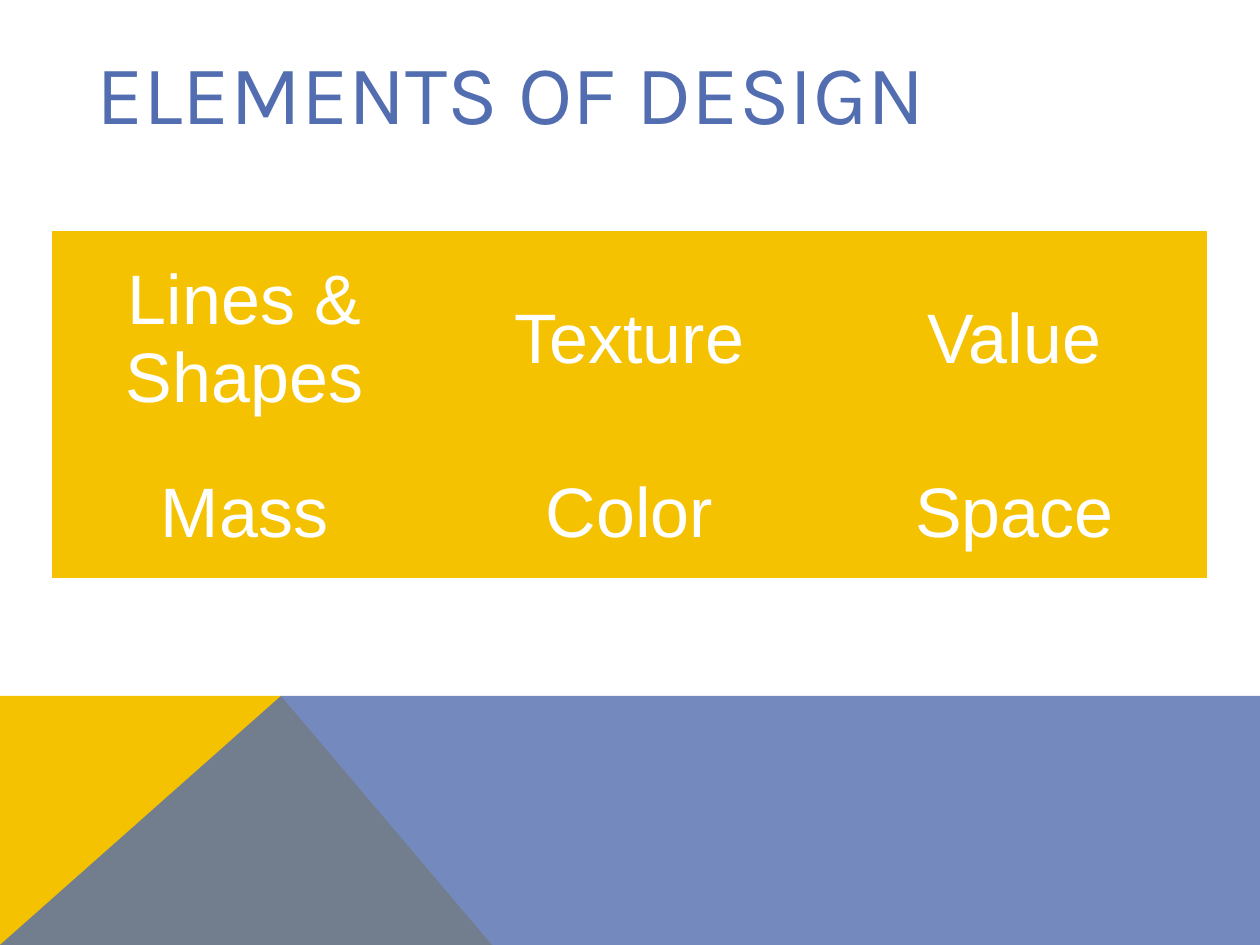
from pptx import Presentation
from pptx.dml.color import RGBColor
from pptx.enum.text import MSO_ANCHOR, PP_ALIGN
from pptx.oxml.ns import qn
from pptx.util import Pt

PX = 914400 // 126
WIDE, HIGH = 1260, 945
GOLD = RGBColor(0xF5, 0xC2, 0x01)
BLUE = RGBColor(0x52, 0x6D, 0xB0)
WHITE = RGBColor(0xFF, 0xFF, 0xFF)
LEFT, CENTER = PP_ALIGN.LEFT, PP_ALIGN.CENTER
MIDDLE = MSO_ANCHOR.MIDDLE

deck = Presentation()
deck.slide_width, deck.slide_height = WIDE * PX, HIGH * PX
slide = deck.slides.add_slide(deck.slide_layouts[6])


def write(frame, text, size, font, color, align=LEFT):
    frame.word_wrap = True
    para = frame.paragraphs[0]
    para.alignment = align
    run = para.add_run()
    run.text = text
    run.font.size = Pt(size)
    run.font.name = font
    run.font.color.rgb = color


def draw(points, color):
    build = slide.shapes.build_freeform(*points[0], scale=PX)
    build.add_line_segments(points[1:], close=True)
    shape = build.convert_to_shape()
    shape.shadow.inherit = False
    shape.fill.solid()
    shape.fill.fore_color.rgb = color
    shape.line.fill.background()
    return shape


# Angled bands at the foot, the blue one see-through
TOP, PEAK = 696, 281
draw([(0, HIGH), (0, TOP), (PEAK, TOP), (492, HIGH)], GOLD)
band = draw([(0, HIGH), (PEAK, TOP), (WIDE, TOP), (WIDE, HIGH)], BLUE)
tint = band.element.spPr.find(qn("a:solidFill"))[0]
tint.append(tint.makeelement(qn("a:alpha"), {"val": "80000"}))

# Title
box = slide.shapes.add_textbox(84 * PX, 53 * PX, 1066 * PX, 76 * PX)
box.text_frame.vertical_anchor = MIDDLE
write(box.text_frame, "ELEMENTS OF DESIGN", 48, "Karla", BLUE)

# Table of elements
WORDS = [
    ["Lines & Shapes", "Texture", "Value"],
    ["Mass", "Color", "Space"],
]
ROWS = [217, 130]
COL = 385
grid = slide.shapes.add_table(
    len(ROWS), 3, 52 * PX, 231 * PX, 3 * COL * PX, sum(ROWS) * PX).table
for col in grid.columns:
    col.width = COL * PX
for row, tall, words in zip(grid.rows, ROWS, WORDS):
    row.height = tall * PX
    for cell, word in zip(row.cells, words):
        cell.fill.solid()
        cell.fill.fore_color.rgb = GOLD
        cell.vertical_anchor = MIDDLE
        write(cell.text_frame, word, 40, "Arial", WHITE, align=CENTER)

# Clear the table style's cell borders
for cell in grid.iter_cells():
    props = cell._tc.get_or_add_tcPr()
    for spot, side in enumerate(("a:lnL", "a:lnR", "a:lnT", "a:lnB")):
        line = props.makeelement(qn(side), {"w": "0"})
        line.append(line.makeelement(qn("a:noFill"), {}))
        props.insert(spot, line)

deck.save("out.pptx")
